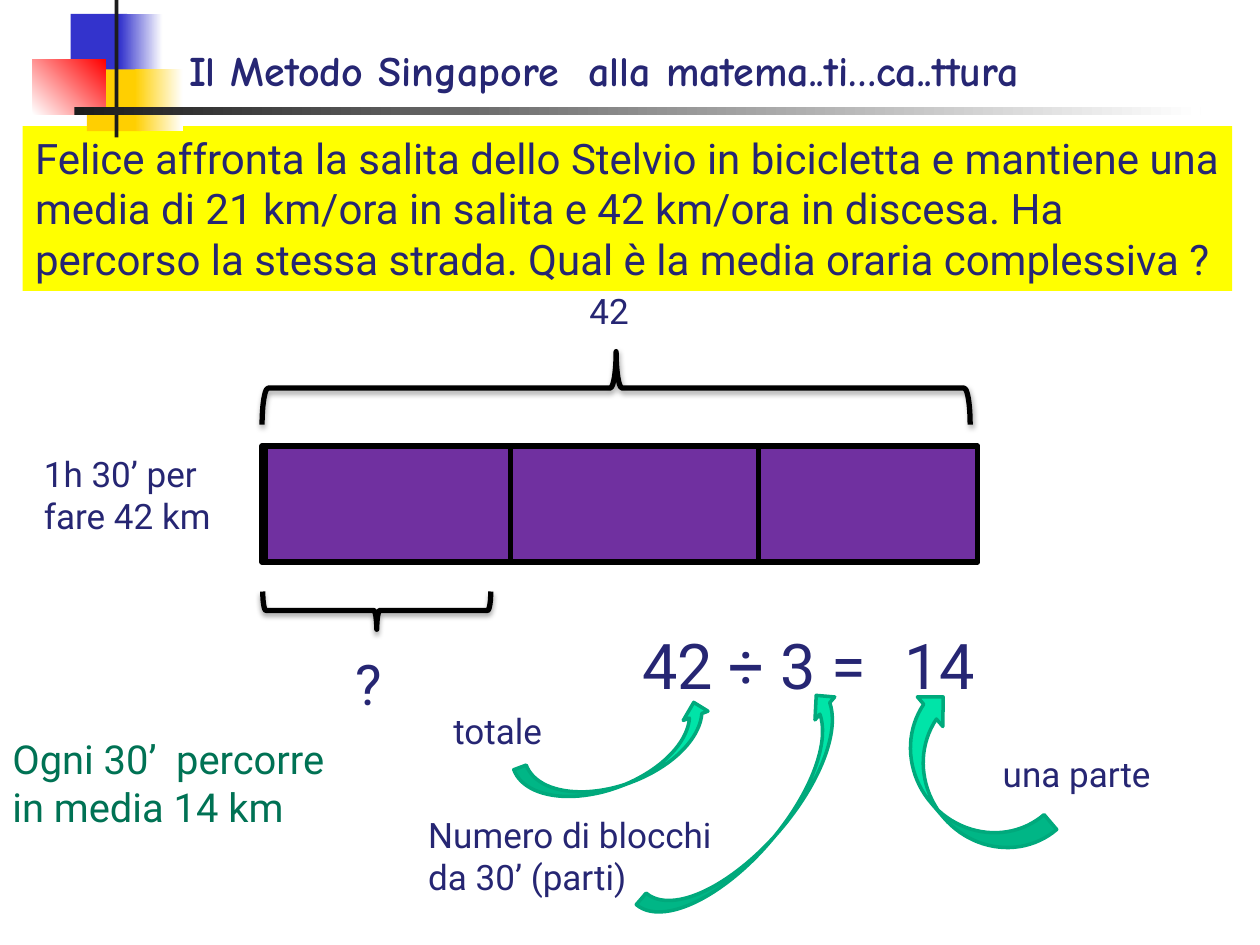
from lxml.etree import SubElement
from pptx import Presentation
from pptx.dml.color import RGBColor
from pptx.enum.shapes import MSO_SHAPE
from pptx.enum.text import MSO_ANCHOR, MSO_AUTO_SIZE, PP_ALIGN
from pptx.oxml.ns import qn
from pptx.util import Inches, Pt

COLUMNS, ROWS = 100, 75
CELL = Inches(0.1)

NAVY = RGBColor(0x26, 0x26, 0x73)
GREEN = RGBColor(0x00, 0x72, 0x54)
MINT = RGBColor(0x00, 0xE4, 0xA8)
MINT_EDGE = RGBColor(0x00, 0xA9, 0x7C)
PURPLE = RGBColor(0x70, 0x30, 0xA0)
YELLOW = RGBColor(0xFF, 0xFF, 0x00)
GOLD = RGBColor(0xFF, 0xCF, 0x01)
BLUE = RGBColor(0x33, 0x33, 0xCC)
RED = RGBColor(0xFF, 0x00, 0x00)
CHARCOAL = RGBColor(0x1C, 0x1C, 0x1C)
BLACK = RGBColor(0x00, 0x00, 0x00)
WHITE = RGBColor(0xFF, 0xFF, 0xFF)


def cells(*lengths):
    return [round(length * CELL) for length in lengths]


def format_font(para, size, color, name="Roboto", bold=False):
    para.font.size = Pt(size)
    para.font.color.rgb = color
    para.font.name = name
    para.font.bold = bold


def set_title(page, text, area):
    title = page.shapes.title
    title.left, title.top, title.width, title.height = cells(*area)
    frame = title.text_frame
    frame.text = text
    frame.auto_size = MSO_AUTO_SIZE.NONE
    frame.vertical_anchor = MSO_ANCHOR.MIDDLE
    para = frame.paragraphs[0]
    para.alignment = PP_ALIGN.LEFT
    format_font(para, 24, NAVY, "Comic Neue", True)


def add_text(page, text, area, size=20, color=NAVY, fill=None):
    box = page.shapes.add_textbox(*cells(*area))
    box.text_frame.word_wrap = True
    if fill is not None:
        box.fill.solid()
        box.fill.fore_color.rgb = fill
    para = box.text_frame.paragraphs[0]
    para.text = text
    format_font(para, size, color)
    return para


def add_tab_stop(para, position):
    properties = para._p.get_or_add_pPr()
    tabs = SubElement(properties, qn("a:tabLst"))
    SubElement(tabs, qn("a:tab"), pos=str(cells(position)[0]), algn="l")
    properties.insert(0, tabs)


def add_figure(page, kind, area, fill=None, line=None, width=3, rotation=0):
    figure = page.shapes.add_shape(kind, *cells(*area))
    figure.shadow.inherit = False
    figure.rotation = rotation
    if fill is None:
        figure.fill.background()
    else:
        figure.fill.solid()
        figure.fill.fore_color.rgb = fill
    if line is None:
        figure.line.fill.background()
    else:
        figure.line.color.rgb = line
        figure.line.width = Pt(width)
    return figure


def add_fade(page, area, start, end, angle=0):
    fade = add_figure(page, MSO_SHAPE.RECTANGLE, area, start)
    fade.fill.gradient()
    fade.fill.gradient_angle = angle
    for stop, color, position in zip(fade.fill.gradient_stops, (start, end), (0, 1)):
        stop.color.rgb = color
        stop.position = position


def add_brace(page, area, rotation):
    brace = add_figure(page, MSO_SHAPE.RIGHT_BRACE, area, None, BLACK, 3, rotation)
    brace.adjustments[0] = 0.083
    effects = brace._element.spPr.find(qn("a:effectLst"))
    shadow = SubElement(effects, qn("a:outerShdw"), blurRad=str(Pt(3.1)),
                        dist=str(Pt(1.8)), dir="5400000", rotWithShape="0")
    color = SubElement(shadow, qn("a:srgbClr"), val=str(BLACK))
    SubElement(color, qn("a:alpha"), val="35000")


def add_arrow(page, kind, area, rotation):
    add_figure(page, kind, area, MINT, MINT_EDGE, 2, rotation)


def add_bar_model(page):
    for left, width in ((20.8, 56.7), (21.1, 19.4), (60.2, 17.4)):
        add_figure(page, MSO_SHAPE.RECTANGLE, (left, 35.4, width, 9.2), PURPLE, BLACK)
    add_brace(page, (46, 2.7 + 0, 5.8, 56.2), 270)
    add_brace(page, (28.4, 39.4, 3, 18.1), 90)
    add_text(page, "42", (45.8, 22.5, 6.7, 4.3))
    add_text(page, "?", (27.2, 51.1, 4.8, 6.4), 32)
    add_text(page, "1h 30’ per fare 42 km", (2.5, 35.4, 16.2, 7.7))


def add_equation(page):
    equation = add_text(page, "42 ÷ 3 =\t14", (50, 49.2, 31.7, 7.1), 36)
    add_tab_stop(equation, 20.8)
    add_arrow(page, MSO_SHAPE.CURVED_UP_ARROW, (41, 58.1, 16.3, 4.2), 339.5)
    add_arrow(page, MSO_SHAPE.CURVED_UP_ARROW, (48.3, 62.2, 23.1, 4.8), 310.7)
    add_arrow(page, MSO_SHAPE.CURVED_LEFT_ARROW, (73.4, 54.3, 6.2, 15.4), 139.4)
    add_text(page, "totale", (35, 55.8, 11.7, 4.3))
    add_text(page, "Numero di blocchi da 30’ (parti)", (33, 64.1, 27.8, 7.7))
    add_text(page, "una parte", (78.6, 59.2, 18.1, 4.4))


def add_ornament(page):
    for color, top, left, width, fade_left, fade_width in (
        (BLUE, 1.1, 5.6, 4.5, 9.5, 3.4),
        (GOLD, 5.5, 6.9, 4.3, 10.7, 3.8),
    ):
        add_figure(page, MSO_SHAPE.RECTANGLE, (left, top, width, 4.9), color)
        add_fade(page, (fade_left, top, fade_width, 4.9), color, WHITE)
    add_fade(page, (2.6, 4.7, 5.8, 4.4), WHITE, RED, 45)
    add_figure(page, MSO_SHAPE.RECTANGLE, (9.1, 0, 0.3, 10.9), CHARCOAL)
    add_fade(page, (5.9, 8.5, 89.4, 0.6), CHARCOAL, WHITE)


def main():
    deck = Presentation()
    deck.slide_width, deck.slide_height = cells(COLUMNS, ROWS)
    page = deck.slides.add_slide(deck.slide_layouts[5])
    set_title(page, "Il Metodo Singapore  alla matema..ti…ca..ttura", (14, 3, 86, 5))
    add_text(
        page,
        "Felice affronta la salita dello Stelvio in bicicletta e mantiene una "
        "media di 21 km/ora in salita e 42 km/ora in discesa. Ha percorso la "
        "stessa strada. Qual è la media oraria complessiva ?",
        (1.8, 10, 96, 13.1), 24, fill=YELLOW,
    )
    add_bar_model(page)
    add_equation(page)
    add_text(page, "Ogni 30’  percorre in media 14 km", (0, 57.8, 28.3, 8.7), 22.8, GREEN)
    add_ornament(page)
    deck.save("out.pptx")


if __name__ == "__main__":
    main()
